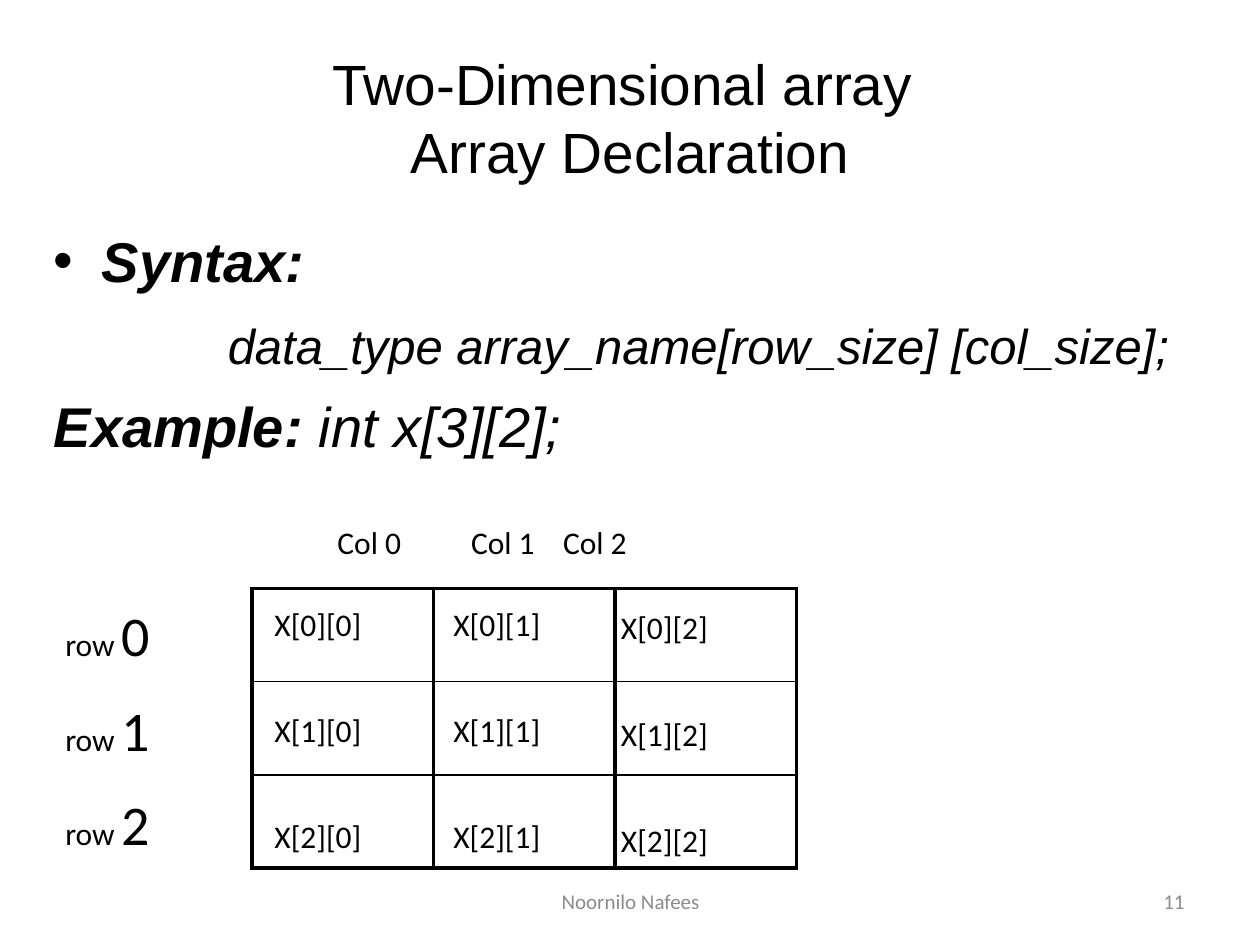
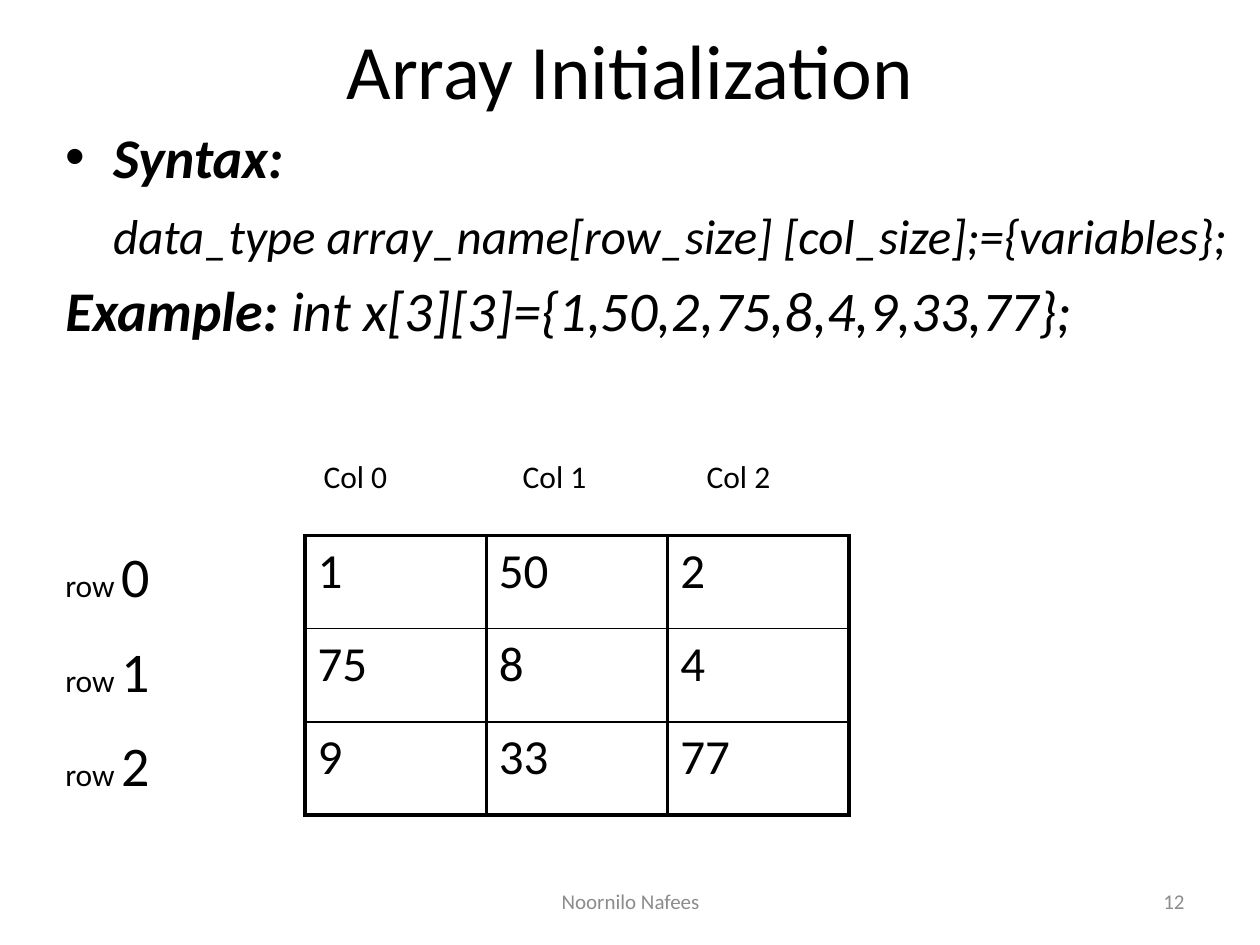
from dataclasses import dataclass

from lxml import etree
from pptx import Presentation
from pptx.dml import color
from pptx.enum import text
from pptx.oxml import ns
from pptx.util import Inches, Pt

BLACK = "000000"
GREY = "8C8C8C"
SANS = "Arial"
BODY = "Calibri"
CELL_WIDTH = 1.44
CELL_HEIGHT = 0.74
GRID_SIZE = 3
THICK = 2.25
THIN = 1
LEFT, CENTER, RIGHT = text.PP_ALIGN.LEFT, text.PP_ALIGN.CENTER, text.PP_ALIGN.RIGHT


@dataclass
class Span:
    wording: str
    size: float
    bold: bool = False


@dataclass
class Line:
    spans: list[Span]
    font: str = BODY
    shade: str = BLACK
    italic: bool = False
    align: text.PP_ALIGN = LEFT
    before: float = 0
    indent: float = 0
    bullet: bool = False
    tabs: tuple[float, ...] = ()


@dataclass
class Area:
    left: float
    top: float
    width: float
    height: float

    def lengths(self) -> list[int]:
        return [Inches(n) for n in (self.left, self.top, self.width, self.height)]


@dataclass
class SyntaxBlock:
    area: Area
    font: str
    declaration: str
    example: str
    indent: float
    gaps: tuple[float, float]


def rgb(shade: str) -> color.RGBColor:
    return color.RGBColor.from_string(shade)


def write_line(para, line: Line) -> None:
    properties = para._p.get_or_add_pPr()
    if line.indent:
        properties.set("marL", str(Inches(line.indent)))
    if line.bullet:
        properties.set("indent", str(-Inches(line.indent)))
        etree.SubElement(properties, ns.qn("a:buFont"), typeface=SANS)
        etree.SubElement(properties, ns.qn("a:buChar"), char="•")
    if line.tabs:
        stops = etree.SubElement(properties, ns.qn("a:tabLst"))
        for stop in line.tabs:
            etree.SubElement(stops, ns.qn("a:tab"), pos=str(Inches(stop)), algn="l")
    para.alignment = line.align
    para.space_before = Pt(line.before)
    para.font.name = line.font
    para.font.italic = line.italic
    para.font.color.rgb = rgb(line.shade)
    agreed = len({(span.size, span.bold) for span in line.spans}) == 1
    for span in line.spans:
        if agreed:
            para.text = span.wording
            font = para.font
        else:
            run = para.add_run()
            run.text = span.wording
            font = run.font
        font.size = Pt(span.size)
        font.bold = span.bold


def add_text(page, area: Area, lines: list[Line], middle: bool = False) -> None:
    box = page.shapes.add_textbox(*area.lengths())
    frame = box.text_frame
    frame.word_wrap = True
    frame.vertical_anchor = text.MSO_ANCHOR.MIDDLE if middle else text.MSO_ANCHOR.TOP
    for number, line in enumerate(lines):
        write_line(frame.add_paragraph() if number else frame.paragraphs[0], line)


def add_title(page, wording: str, top: float, size: float, font: str) -> None:
    title = Line([Span(wording, size)], font=font, align=CENTER)
    add_text(page, Area(0.5, top, 9, 1.25), [title], middle=True)


def add_syntax(page, block: SyntaxBlock) -> None:
    first_gap, second_gap = block.gaps
    add_text(page, block.area, [
        Line([Span("Syntax:", 32, True)], block.font, italic=True, indent=0.38, bullet=True),
        Line([Span(block.declaration, 28)], block.font, italic=True,
             before=first_gap, indent=block.indent),
        Line([Span("Example: ", 32, True), Span(block.example, 32)], block.font,
             italic=True, before=second_gap),
    ])


def add_row_labels(page, top: float) -> None:
    add_text(page, Area(0.42, top, 1.5, 2.23), [
        Line([Span("row ", 18), Span(str(row), 32)], before=15.5 if row else 0)
        for row in range(GRID_SIZE)
    ])


def add_column_labels(page, area: Area, tabs: tuple[float, ...]) -> None:
    labels = "\t".join(f"Col {column}" for column in range(GRID_SIZE))
    add_text(page, area, [Line([Span(labels, 18)], tabs=tabs)])


def draw_borders(cell, row: int) -> None:
    widths = {
        "a:lnL": THICK,
        "a:lnR": THICK,
        "a:lnT": THIN if row else THICK,
        "a:lnB": THICK if row == GRID_SIZE - 1 else THIN,
    }
    properties = cell._tc.get_or_add_tcPr()
    for side, width in widths.items():
        edge = etree.SubElement(properties, ns.qn(side), w=str(Pt(width)))
        fill = etree.SubElement(edge, ns.qn("a:solidFill"))
        etree.SubElement(fill, ns.qn("a:srgbClr"), val=BLACK)
    cell.fill.background()


def add_grid(page, left: float, top: float, values: list[list[int]] | None = None) -> None:
    area = Area(left, top, GRID_SIZE * CELL_WIDTH, GRID_SIZE * CELL_HEIGHT)
    table = page.shapes.add_table(GRID_SIZE, GRID_SIZE, *area.lengths()).table
    table.first_row = False
    table.horz_banding = False
    for column in table.columns:
        column.width = Inches(CELL_WIDTH)
    for row in range(GRID_SIZE):
        table.rows[row].height = Inches(CELL_HEIGHT)
        for column in range(GRID_SIZE):
            cell = table.cell(row, column)
            draw_borders(cell, row)
            if values:
                line = Line([Span(str(values[row][column]), 28)])
                write_line(cell.text_frame.paragraphs[0], line)


def add_footer(page, number: int) -> None:
    for left, width, wording, align in (
        (7.17, 2.33, str(number), RIGHT),
        (3.42, 3.17, "Noornilo Nafees", CENTER),
    ):
        line = Line([Span(wording, 12)], shade=GREY, align=align)
        add_text(page, Area(left, 6.95, width, 0.4), [line], middle=True)


def build_declaration(page) -> None:
    add_title(page, "Two-Dimensional array \vArray Declaration", 0.3, 32.4, SANS)
    add_syntax(page, SyntaxBlock(
        Area(0.33, 1.75, 9.17, 4.95), SANS,
        "data_type array_name[row_size] [col_size];", "int x[3][2];", 1.38, (12.5, 9.7)))
    add_grid(page, 2, 4.67)
    add_column_labels(page, Area(2.58, 4.1, 3.75, 0.57), (1.06, 1.79))
    add_row_labels(page, 4.72)
    for column, (left, top) in enumerate(((2.08, 4.75), (3.5, 4.75), (4.83, 4.78))):
        add_text(page, Area(left, top, 1.42, 2.22), [
            Line([Span(f"X[{row}][{column}]", 18)], before=39 if row else 0)
            for row in range(GRID_SIZE)
        ])
    add_footer(page, 11)


def build_initialization(page) -> None:
    add_title(page, "Array Initialization", -0.08, 44, BODY)
    add_syntax(page, SyntaxBlock(
        Area(0.42, 0.92, 9.42, 6.33), BODY,
        "data_type array_name[row_size] [col_size];={variables};",
        "int x[3][3]={1,50,2,75,8,4,9,33,77};", 0.38, (9.3, 6.6)))
    add_row_labels(page, 4.25)
    add_column_labels(page, Area(2.47, 3.58, 4.67, 0.4), (1.58, 3.04))
    add_grid(page, 2.42, 4.25, [[1, 50, 2], [75, 8, 4], [9, 33, 77]])
    add_footer(page, 12)


def main() -> None:
    deck = Presentation()
    deck.slide_width = Inches(10)
    deck.slide_height = Inches(7.5)
    for build in (build_declaration, build_initialization):
        build(deck.slides.add_slide(deck.slide_layouts[6]))
    deck.save("out.pptx")


if __name__ == "__main__":
    main()
